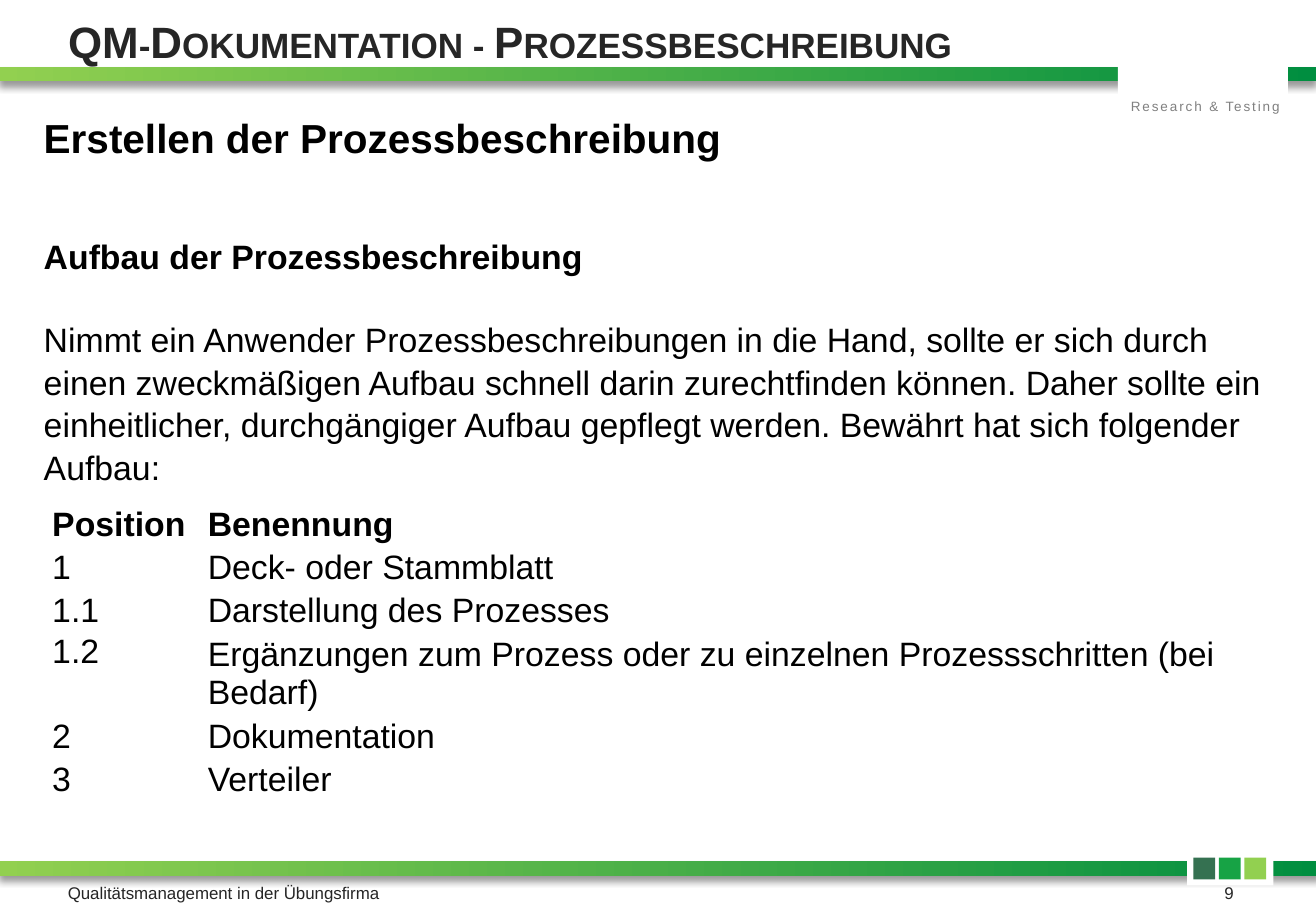
"""Build the slide on the structure of a process description."""

from dataclasses import dataclass

import lxml.etree
import pptx
import pptx.dml.color
import pptx.enum.shapes
import pptx.enum.text
import pptx.oxml.ns
import pptx.shapes.autoshape
import pptx.slide
import pptx.text.text
import pptx.util

PX = 4572
FONT = "Arial"
BLACK = pptx.dml.color.RGBColor(0x00, 0x00, 0x00)
CHARCOAL = pptx.dml.color.RGBColor(0x26, 0x26, 0x26)
GREY = pptx.dml.color.RGBColor(0x80, 0x80, 0x80)
WHITE = pptx.dml.color.RGBColor(0xFF, 0xFF, 0xFF)
DARK_GREEN = pptx.dml.color.RGBColor(0x00, 0x8E, 0x40)
LIGHT_GREEN = pptx.dml.color.RGBColor(0x92, 0xD0, 0x50)
PINE = pptx.dml.color.RGBColor(0x35, 0x71, 0x51)
GREEN = pptx.dml.color.RGBColor(0x17, 0xA3, 0x45)
LEFT = pptx.enum.text.PP_ALIGN.LEFT
CENTER = pptx.enum.text.PP_ALIGN.CENTER
TOP = pptx.enum.text.MSO_ANCHOR.TOP
MIDDLE = pptx.enum.text.MSO_ANCHOR.MIDDLE


@dataclass(frozen=True)
class Box:
    """Place of an element in px."""

    left: int
    top: int
    width: int
    height: int

    def emu(self) -> tuple[int, int, int, int]:
        """Return the place in EMU."""
        return self.left * PX, self.top * PX, self.width * PX, self.height * PX


@dataclass(frozen=True)
class Label:
    """A small line of text on the frame of the slide."""

    text: str
    box: Box
    size: int
    color: pptx.dml.color.RGBColor
    align: pptx.enum.text.PP_ALIGN = LEFT
    tracking: int = 0


@dataclass(frozen=True)
class Passage:
    """A paragraph of the body, with the gap above it in points."""

    text: str
    size: int
    bold: bool
    gap: int


BANDS = [Box(-2, 1418, 2174, 24), Box(-2, 110, 2168, 24)]
GAPS = [Box(1954, 1396, 142, 62), Box(1840, 0, 280, 182)]
SQUARES = [PINE, GREEN, LIGHT_GREEN]
LABELS = [
    Label("Research & Testing", Box(1802, 152, 364, 48), 8, GREY, CENTER, 110),
    Label("Qualitätsmanagement in der Übungsfirma", Box(92, 1444, 1858, 56), 10, CHARCOAL),
    Label("9", Box(1968, 1444, 110, 56), 10, CHARCOAL, CENTER),
]
PASSAGES = [
    Passage("Erstellen der Prozessbeschreibung", 24, True, 0),
    Passage("Aufbau der Prozessbeschreibung", 20, True, 43),
    Passage(
        "Nimmt ein Anwender Prozessbeschreibungen in die Hand, sollte er sich durch "
        "einen zweckmäßigen Aufbau schnell darin zurechtfinden können. Daher sollte ein "
        "einheitlicher, durchgängiger Aufbau gepflegt werden. Bewährt hat sich folgender "
        "Aufbau:",
        20, False, 24,
    ),
]
ROWS = [
    ("Position", "Benennung"),
    ("1", "Deck- oder Stammblatt"),
    ("1.1", "Darstellung des Prozesses"),
    ("1.2", "Ergänzungen zum Prozess oder zu einzelnen Prozessschritten (bei Bedarf)"),
    ("2", "Dokumentation"),
    ("3", "Verteiler"),
]
TALL_ROW = 3
COLUMN_WIDTHS = [256, 1744]


def set_font(
    para: pptx.text.text._Paragraph, size: int, color: pptx.dml.color.RGBColor, bold: bool = False
) -> None:
    """Set the font of a whole paragraph."""
    para.font.name = FONT
    para.font.size = pptx.util.Pt(size)
    para.font.bold = bold
    para.font.color.rgb = color


def set_font_attribute(para: pptx.text.text._Paragraph, name: str, value: str) -> None:
    """Set a font attribute on the paragraph's default run properties."""
    para._p.pPr.find(pptx.oxml.ns.qn("a:defRPr")).set(name, value)


def add_rectangle(
    page: pptx.slide.Slide, box: Box, color: pptx.dml.color.RGBColor
) -> pptx.shapes.autoshape.Shape:
    """Draw a plain rectangle without line or shadow."""
    shape = page.shapes.add_shape(pptx.enum.shapes.MSO_SHAPE.RECTANGLE, *box.emu())
    shape.fill.solid()
    shape.fill.fore_color.rgb = color
    shape.line.fill.background()
    shape.shadow.inherit = False
    return shape


def add_band(page: pptx.slide.Slide, box: Box) -> None:
    """Draw a green gradient band with a soft shadow below."""
    qn = pptx.oxml.ns.qn
    band = add_rectangle(page, box, GREEN)
    band.fill.gradient()
    band.fill.gradient_angle = 0
    for stop, color in zip(band.fill.gradient_stops, (LIGHT_GREEN, DARK_GREEN)):
        stop.color.rgb = color
    effects = band._element.spPr.find(qn("a:effectLst"))
    shadow = lxml.etree.SubElement(
        effects, qn("a:outerShdw"), blurRad="50800", dist="38100", dir="5400000", rotWithShape="0"
    )
    black = lxml.etree.SubElement(shadow, qn("a:srgbClr"), val="000000")
    lxml.etree.SubElement(black, qn("a:alpha"), val="40000")


def add_label(page: pptx.slide.Slide, label: Label) -> None:
    """Write one label of the frame."""
    frame = page.shapes.add_textbox(*label.box.emu()).text_frame
    frame.word_wrap = True
    para = frame.paragraphs[0]
    para.text = label.text
    para.alignment = label.align
    set_font(para, label.size, label.color)
    if label.tracking:
        set_font_attribute(para, "spc", str(label.tracking))


def place_text(
    page: pptx.slide.Slide, index: int, box: Box, anchor: pptx.enum.text.MSO_ANCHOR
) -> pptx.text.text.TextFrame:
    """Move a placeholder into place, in front of the frame, and return its text frame."""
    holder = page.placeholders[index]
    holder.left, holder.top, holder.width, holder.height = box.emu()
    page.shapes._spTree.append(holder._element)
    frame = holder.text_frame
    frame.auto_size = pptx.enum.text.MSO_AUTO_SIZE.NONE
    frame.vertical_anchor = anchor
    return frame


def write_title(page: pptx.slide.Slide) -> None:
    """Write the title in small capitals."""
    para = place_text(page, 0, Box(92, 0, 1748, 136), MIDDLE).paragraphs[0]
    para.text = "QM-Dokumentation - Prozessbeschreibung"
    para.alignment = LEFT
    set_font(para, 26, CHARCOAL, True)
    set_font_attribute(para, "cap", "small")


def write_body(page: pptx.slide.Slide) -> None:
    """Write the headings and the introduction without bullets."""
    frame = place_text(page, 1, Box(52, 172, 2078, 626), TOP)
    for number, passage in enumerate(PASSAGES):
        para = frame.add_paragraph() if number else frame.paragraphs[0]
        para.text = passage.text
        para.line_spacing = 1.05
        para.space_before = pptx.util.Pt(passage.gap)
        properties = para._p.get_or_add_pPr()
        properties.set("marL", "0")
        properties.set("indent", "0")
        lxml.etree.SubElement(properties, pptx.oxml.ns.qn("a:buNone"))
        set_font(para, passage.size, BLACK, passage.bold)


def add_position_table(page: pptx.slide.Slide) -> None:
    """Add the table of positions and their names."""
    box = Box(84, 828, sum(COLUMN_WIDTHS), 492)
    table = page.shapes.add_table(len(ROWS), len(COLUMN_WIDTHS), *box.emu()).table
    table.first_row = table.horz_banding = False
    for column, width in zip(table.columns, COLUMN_WIDTHS):
        column.width = width * PX
    for row, texts in enumerate(ROWS):
        table.rows[row].height = (137 if row == TALL_ROW else 71) * PX
        for column, text in enumerate(texts):
            cell = table.cell(row, column)
            cell.fill.solid()
            cell.fill.fore_color.rgb = WHITE
            cell.margin_left = cell.margin_right = cell.margin_top = cell.margin_bottom = 2 * PX
            cell.vertical_anchor = TOP if (row, column) == (TALL_ROW, 0) else MIDDLE
            para = cell.text_frame.paragraphs[0]
            para.text = text
            set_font(para, 20, BLACK, row == 0)


def main() -> None:
    """Build and save the deck."""
    deck = pptx.Presentation()
    deck.slide_width, deck.slide_height = 2166 * PX, 1500 * PX
    page = deck.slides.add_slide(deck.slide_layouts[1])
    for band, gap in zip(BANDS, GAPS):
        add_band(page, band)
        add_rectangle(page, gap, WHITE)
    for number, color in enumerate(SQUARES):
        add_rectangle(page, Box(1964 + 42 * number, 1412, 36, 36), color)
    for label in LABELS:
        add_label(page, label)
    write_title(page)
    write_body(page)
    add_position_table(page)
    deck.save("out.pptx")


if __name__ == "__main__":
    main()
